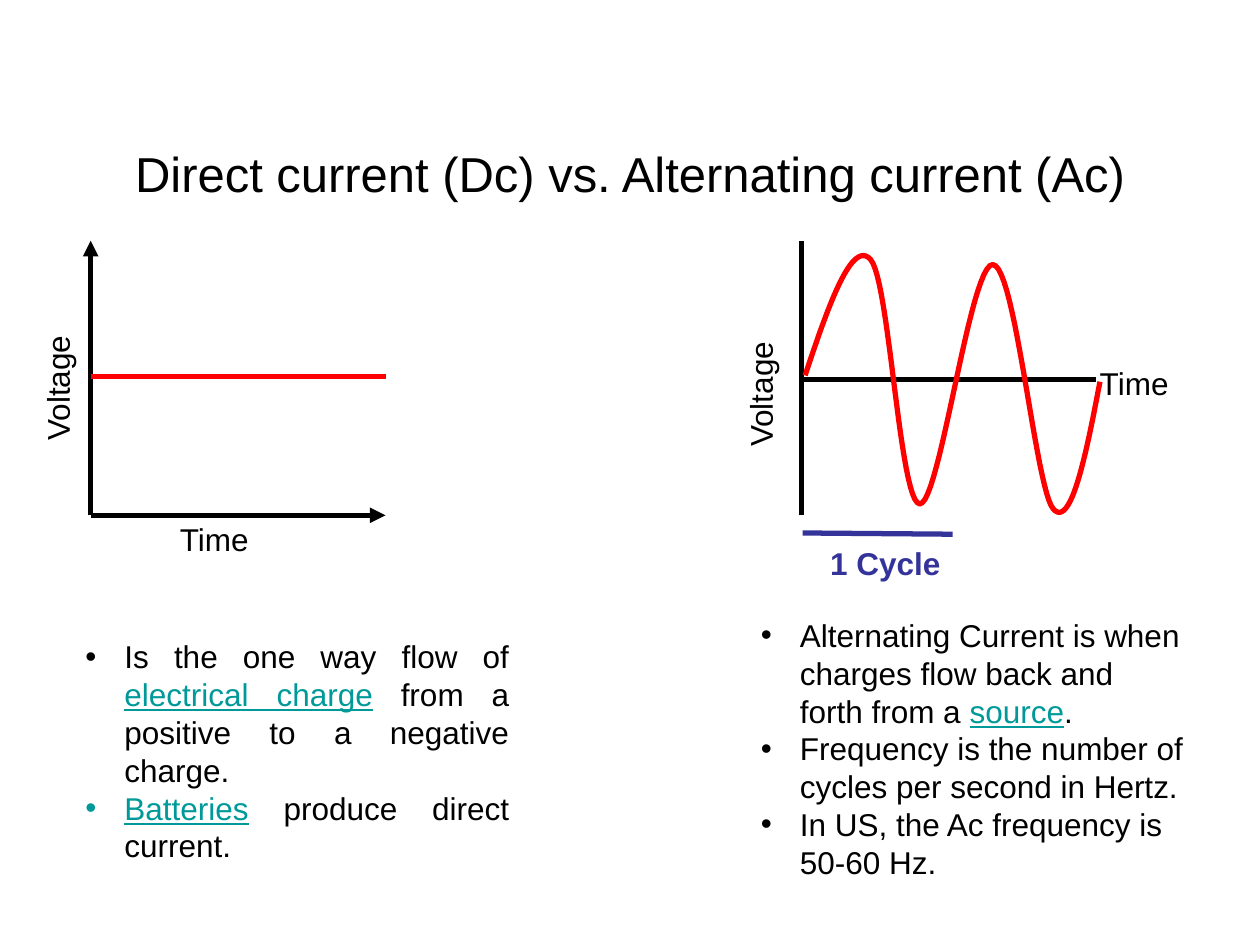
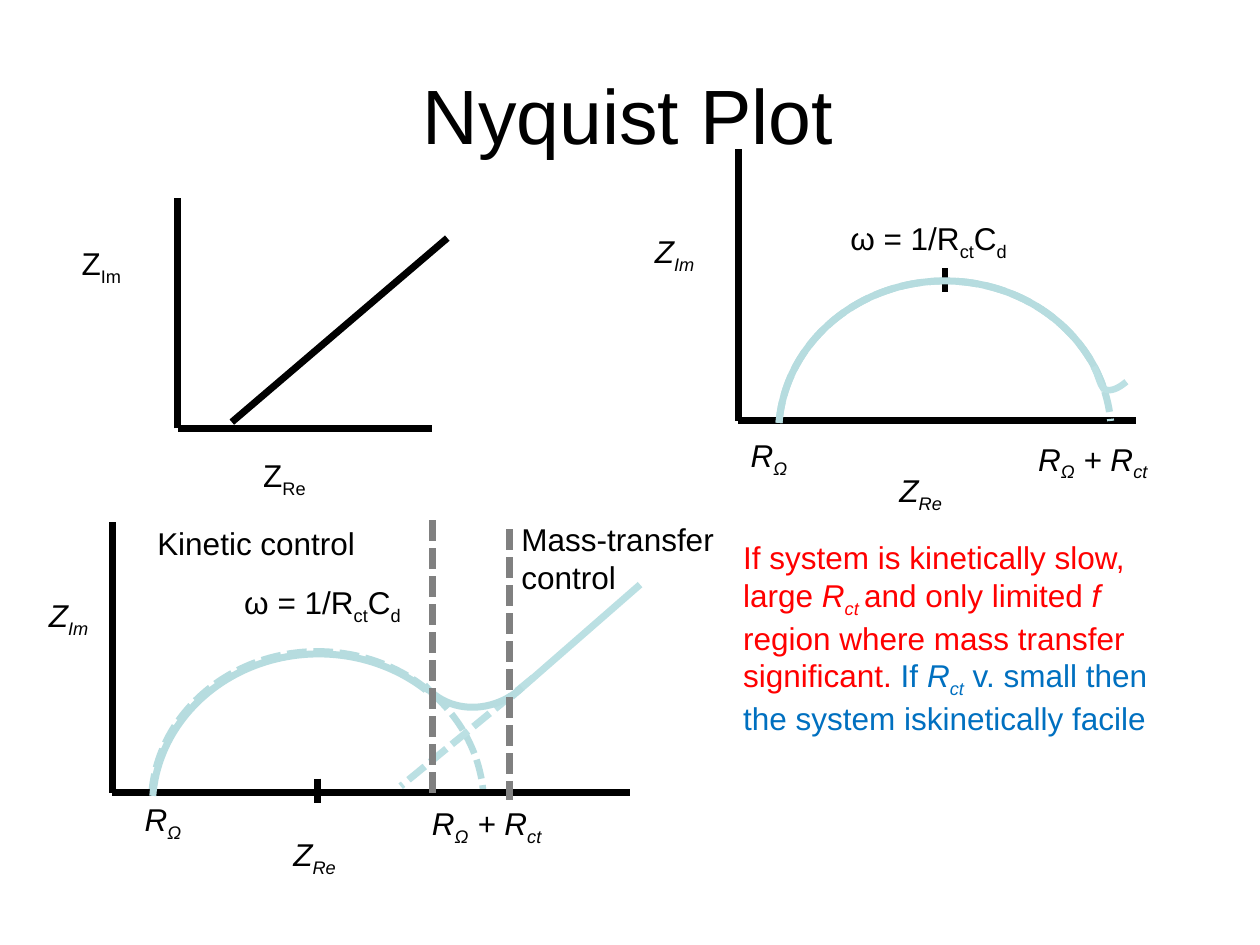
from lxml.etree import SubElement
from pptx import Presentation
from pptx.dml.color import RGBColor
from pptx.enum.dml import MSO_LINE
from pptx.enum.shapes import MSO_CONNECTOR, MSO_SHAPE
from pptx.enum.text import MSO_ANCHOR, PP_ALIGN
from pptx.oxml.ns import qn
from pptx.util import Inches, Pt

WIDTH, HEIGHT = Inches(10), Inches(7.5)
COLUMNS = 10
CELL = WIDTH / COLUMNS
FONT = "Arial"
BLACK, RED, BLUE = "000000", "FF0000", "0070C0"
INDIGO, TEAL, GRAY = "333399", "009999", "808080"
ARC_BLUE, PALE_BLUE = "B6DCDF", "BBE0E3"
SUBSCRIPT_OFFSET = "-25000"
BULLET_INDENT = 0.31
ARC_SIZE = (2.64, 2.43)
LABEL_WIDTH = 0.86
LABEL_HEIGHT = 0.4


def grid(*cells):
    return [round(cell * CELL) for cell in cells]


def color(value):
    return RGBColor.from_string(value)


def style_line(line, line_color, weight, dashed=False):
    line.color.rgb = color(line_color)
    line.width = Pt(weight)
    if dashed:
        line.dash_style = MSO_LINE.SQUARE_DOT


def add_run(paragraph, content, size=18, font_color=BLACK, bold=False,
            italic=False, underline=False, subscript=False):
    run = paragraph.add_run()
    run.text = content
    font = run.font
    font.name, font.size = FONT, Pt(size)
    font.bold, font.italic, font.underline = bold, italic, underline
    font.color.rgb = color(font_color)
    if subscript:
        run._r.get_or_add_rPr().set("baseline", SUBSCRIPT_OFFSET)


def add_bullet(paragraph):
    properties = paragraph._p.get_or_add_pPr()
    indent, = grid(BULLET_INDENT)
    properties.set("marL", str(indent))
    properties.set("indent", str(-indent))
    SubElement(properties, qn("a:buFont"), typeface=FONT)
    SubElement(properties, qn("a:buChar"), char="•")


def add_text(slide, box, *paragraphs, align=PP_ALIGN.LEFT, anchor=MSO_ANCHOR.TOP,
             bullets=False, rotation=0, **run_format):
    shape = slide.shapes.add_textbox(*grid(*box))
    shape.rotation = rotation
    frame = shape.text_frame
    frame.word_wrap = True
    frame.vertical_anchor = anchor
    for index, runs in enumerate(paragraphs):
        paragraph = frame.add_paragraph() if index else frame.paragraphs[0]
        paragraph.alignment = align
        if bullets:
            add_bullet(paragraph)
        for content, changes in [(runs, {})] if isinstance(runs, str) else runs:
            add_run(paragraph, content, **{**run_format, **changes})


def add_title(slide, box, content, size):
    add_text(slide, box, content, size=size, align=PP_ALIGN.CENTER,
             anchor=MSO_ANCHOR.MIDDLE)


def add_symbol(slide, left, top, pattern, width=LABEL_WIDTH, **run_format):
    runs = [(part, {"subscript": index % 2 == 1})
            for index, part in enumerate(pattern.split("|"))]
    add_text(slide, (left, top, width, LABEL_HEIGHT), runs, **run_format)


def add_line(slide, start, end, line_color=BLACK, weight=4, dashed=False, arrow=False):
    connector = slide.shapes.add_connector(
        MSO_CONNECTOR.STRAIGHT, *grid(*start), *grid(*end))
    style_line(connector.line, line_color, weight, dashed)
    if arrow:
        SubElement(connector.line._get_or_add_ln(), qn("a:tailEnd"), type="triangle")
    SubElement(connector._element.spPr, qn("a:effectLst"))


def add_axes(slide, left, top, right, bottom, **line_format):
    add_line(slide, (left, bottom), (left, top), **line_format)
    add_line(slide, (left, bottom), (right, bottom), **line_format)


def add_arc(slide, left, top, start, end, size=ARC_SIZE, weight=4, dashed=False, rotation=0):
    arc = slide.shapes.add_shape(MSO_SHAPE.ARC, *grid(left, top, *size))
    arc.adjustments[0], arc.adjustments[1] = start * 0.6, end * 0.6
    arc.rotation = rotation
    arc.shadow.inherit = False
    arc.fill.background()
    style_line(arc.line, ARC_BLUE, weight, dashed)


def bezier_points(start, curves, steps=24):
    points = [start]
    for first, second, end in curves:
        origin = points[-1]
        for step in range(1, steps + 1):
            t = step / steps
            weights = ((1 - t) ** 3, 3 * t * (1 - t) ** 2, 3 * t * t * (1 - t), t ** 3)
            corners = (origin, first, second, end)
            points.append(tuple(
                sum(weight * corner[axis] for weight, corner in zip(weights, corners))
                for axis in (0, 1)))
    return points


def add_curve(slide, start, curves, line_color, weight):
    points = [grid(*point) for point in bezier_points(start, curves)]
    builder = slide.shapes.build_freeform(*points[0])
    builder.add_line_segments(points[1:], close=False)
    curve = builder.convert_to_shape()
    curve.shadow.inherit = False
    curve.fill.background()
    style_line(curve.line, line_color, weight)


def add_axis_name(slide, left, top, content, **text_format):
    add_text(slide, (left, top, 1.73, LABEL_HEIGHT), content, **text_format)


def add_direct_current(slide):
    add_axes(slide, 0.72, 1.91, 3.06, 4.09, weight=3, arrow=True)
    add_axis_name(slide, -0.41, 2.53, "Voltage", rotation=270)
    add_axis_name(slide, 1.33, 4.08, "Time")
    add_line(slide, (0.72, 2.99), (3.06, 2.99), RED, weight=3)
    link = {"font_color": TEAL, "underline": True}
    add_text(slide, (0.58, 5.01, 3.56, 1.92),
             [("Is the one way flow of ", {}), ("electrical charge", link),
              (" from a positive to a negative charge. ", {})],
             [("Batteries", link), (" produce direct current.", {})],
             align=PP_ALIGN.JUSTIFY, bullets=True)


def add_alternating_current(slide):
    add_axis_name(slide, 8.63, 2.84, "Time")
    add_line(slide, (6.36, 4.09), (6.36, 1.91), weight=3)
    add_line(slide, (6.36, 3.01), (8.7, 3.01), weight=3)
    add_axis_name(slide, 5.17, 2.58, "Voltage", rotation=270)
    wave = [((6.57, 2.44), (6.76, 1.89), (6.91, 2.06)),
            ((7.06, 2.23), (7.14, 3.99), (7.3, 4)),
            ((7.46, 4), (7.7, 2.09), (7.88, 2.1)),
            ((8.06, 2.11), (8.22, 3.89), (8.36, 4.04)),
            ((8.5, 4.2), (8.62, 3.61), (8.73, 3.03))]
    add_curve(slide, (6.39, 2.98), wave, RED, 3)
    add_line(slide, (6.37, 4.23), (7.56, 4.24), INDIGO, weight=3)
    add_axis_name(slide, 6.49, 4.27, "1 Cycle", font_color=INDIGO, bold=True)
    add_text(slide, (5.94, 4.84, 3.56, 2.22),
             [("Alternating Current is when charges flow back and forth from a ", {}),
              ("source", {"font_color": TEAL, "underline": True}), (".", {})],
             "Frequency is the number of cycles per second in Hertz.",
             "In US, the Ac frequency is 50-60 Hz.", bullets=True)


def add_impedance_labels(slide, imaginary, real, resistance, total, frequency):
    add_symbol(slide, *imaginary, "Z|Im", italic=True)
    add_symbol(slide, *real, "Z|Re", italic=True)
    add_symbol(slide, *resistance, "R|Ω", italic=True)
    add_symbol(slide, *total, "R|Ω| + R|ct", width=1.16, italic=True)
    add_symbol(slide, *frequency, "ω = 1/R|ct|C|d", width=1.87)


def add_mass_transfer_plot(slide):
    add_axes(slide, 1.41, 1.57, 3.43, 3.4)
    add_line(slide, (1.84, 3.35), (3.55, 1.89))
    add_symbol(slide, 0.55, 1.89, "Z|Im")
    add_symbol(slide, 1.99, 3.57, "Z|Re")


def add_kinetic_plot(slide):
    add_axes(slide, 5.86, 1.18, 9.02, 3.34)
    add_arc(slide, 6.18, 2.23, 183.83, 355.5, dashed=True)
    add_line(slide, (7.5, 2.13), (7.5, 2.32))
    add_arc(slide, 6.18, 2.23, 183.83, 344.74)
    add_curve(slide, (8.68, 2.91),
              [((8.72, 2.98), (8.73, 3.07), (8.77, 3.09)),
               ((8.82, 3.11), (8.88, 3.08), (8.94, 3.03))], PALE_BLUE, 3.75)
    add_impedance_labels(slide, imaginary=(5.1, 1.79), real=(7.04, 3.69),
                         resistance=(5.86, 3.41), total=(8.14, 3.44),
                         frequency=(6.65, 1.69))


def add_mixed_control_plot(slide):
    add_arc(slide, 1.2, 5.17, 183.83, 355.42, weight=3.75, dashed=True)
    add_axes(slide, 0.89, 4.14, 5, 6.29)
    add_arc(slide, 1.21, 5.19, 183.83, 312.5)
    add_line(slide, (2.52, 6.18), (2.52, 6.37))
    add_line(slide, (4.06, 5.53), (5.08, 4.64), PALE_BLUE)
    add_line(slide, (4.23, 5.38), (3.18, 6.24), PALE_BLUE, dashed=True)
    add_arc(slide, 3.24, 4.57, 270, 2.64, size=(1.12, 1.02), rotation=137.7)
    for left, top, bottom in ((3.43, 4.13, 6.29), (4.04, 4.2, 6.35)):
        add_line(slide, (left, top), (left, bottom), GRAY, dashed=True)
    add_text(slide, (1.15, 4.11, 1.87, LABEL_HEIGHT), "Kinetic control")
    add_text(slide, (4.04, 4.08, 1.87, 0.71), "Mass-transfer control")
    add_impedance_labels(slide, imaginary=(0.29, 4.68), real=(2.23, 6.58),
                         resistance=(1.05, 6.3), total=(3.33, 6.33),
                         frequency=(1.84, 4.58))


def add_control_note(slide):
    italic = {"italic": True}
    lower = {"italic": True, "subscript": True}
    blue = {"font_color": BLUE}
    add_text(slide, (5.8, 4.22, 3.75, 1.62),
             [("If system is kinetically slow, large ", {}), ("R", italic), ("ct ", lower),
              ("and only limited ", {}), ("f", italic),
              (" region where mass transfer significant.", {}),
              (" If ", blue), ("R", {**blue, **italic}), ("ct", {**blue, **lower}),
              (" v. small then the system iskinetically facile", blue)],
             font_color=RED)


def main():
    presentation = Presentation()
    presentation.slide_width, presentation.slide_height = WIDTH, HEIGHT
    blank = presentation.slide_layouts[6]

    current_slide = presentation.slides.add_slide(blank)
    add_title(current_slide, (0.5, 0.75, 9, 1.25),
              "Direct current (Dc) vs. Alternating current (Ac)", 28)
    add_direct_current(current_slide)
    add_alternating_current(current_slide)

    nyquist_slide = presentation.slides.add_slide(blank)
    add_title(nyquist_slide, (0.07, 0.28, 9.83, 1.25), "Nyquist Plot", 44)
    add_mass_transfer_plot(nyquist_slide)
    add_mixed_control_plot(nyquist_slide)
    add_kinetic_plot(nyquist_slide)
    add_control_note(nyquist_slide)

    presentation.save("out.pptx")


if __name__ == "__main__":
    main()
